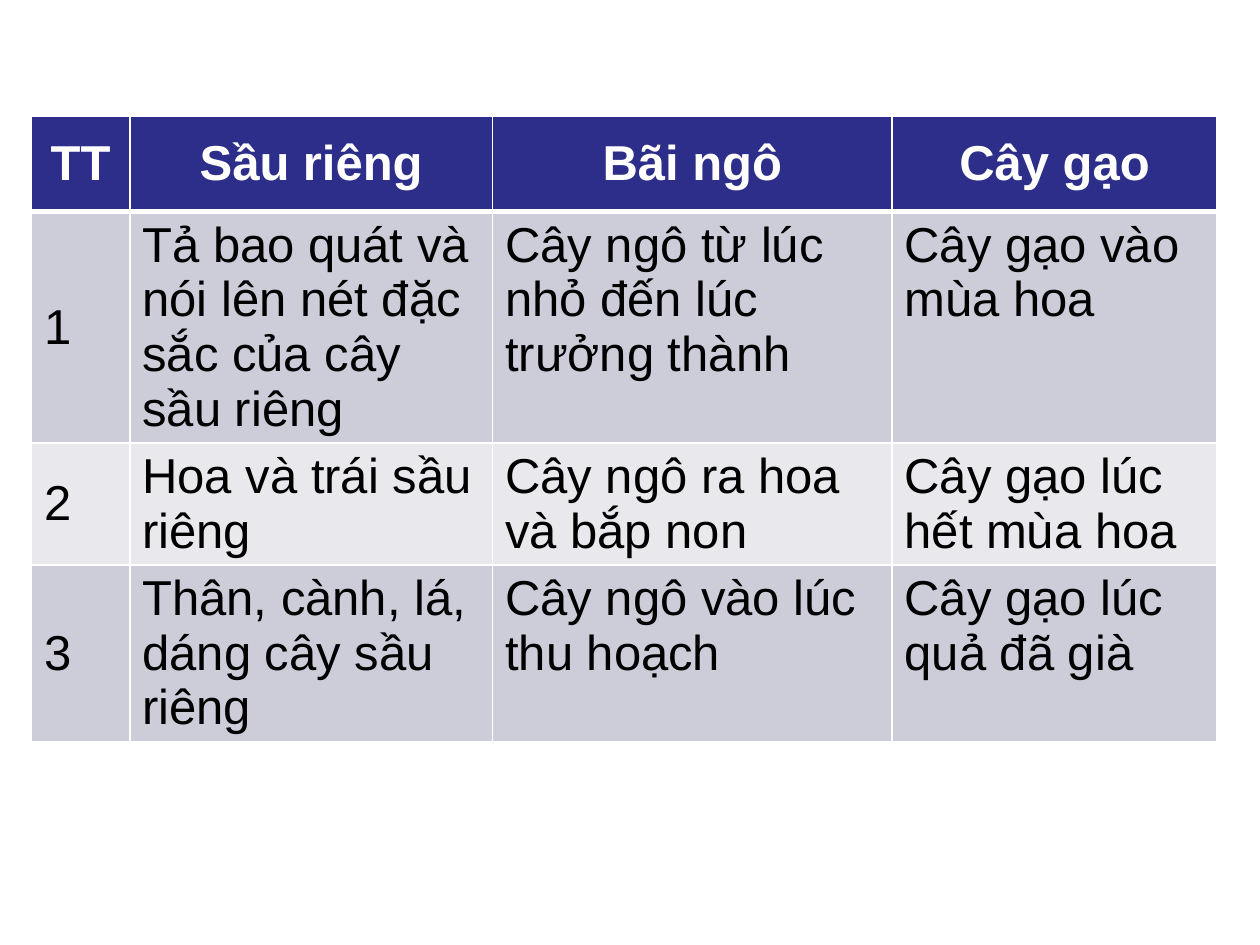
from lxml.etree import SubElement
from pptx import Presentation
from pptx.dml.color import RGBColor
from pptx.enum.text import MSO_ANCHOR, PP_ALIGN
from pptx.oxml.ns import qn
from pptx.util import Inches, Pt

SLIDE_WIDTH, SLIDE_HEIGHT = Inches(10), Inches(7.5)
COLORS = {
    "header": "2D2D8A",
    "odd": "CDCDDA",
    "even": "E8E8ED",
    "border": "FFFFFF",
    "header_text": "FFFFFF",
    "body_text": "000000",
}
# Column widths as shares of the slide width, row heights in inches
COLUMN_SHARES = [0.078, 0.288, 0.317, 0.258]
ROW_HEIGHTS = [0.76, 1.83, 0.97, 1.4]
COMPARISON = [
    ["TT", "Sầu riêng", "Bãi ngô", "Cây gạo"],
    ["1", "Tả bao quát và nói lên nét đặc sắc của cây sầu riêng",
     "Cây ngô từ lúc nhỏ đến lúc trưởng thành", "Cây gạo vào mùa hoa"],
    ["2", "Hoa và trái sầu riêng", "Cây ngô ra hoa và bắp non",
     "Cây gạo lúc hết mùa hoa"],
    ["3", "Thân, cành, lá, dáng cây sầu riêng",
     "Cây ngô vào lúc thu hoạch", "Cây gạo lúc quả đã già"],
]


def color(name):
    return RGBColor.from_string(COLORS[name])


def set_borders(cell, widths):
    """Draw the cell's sides; border lines must precede the fill in tcPr."""
    properties = cell._tc.get_or_add_tcPr()
    for side, width in widths.items():
        line = SubElement(properties, qn(f"a:ln{side}"), w=str(Pt(width)))
        solid = SubElement(line, qn("a:solidFill"))
        SubElement(solid, qn("a:srgbClr"), val=COLORS["border"])


def write_cell(cell, text, row, column):
    is_header = row == 0
    # The rule under the header is thicker, seen from both rows
    set_borders(cell, {"L": 1, "R": 1, "T": 3 if row == 1 else 1,
                       "B": 3 if is_header else 1})
    cell.fill.solid()
    band = "header" if is_header else "odd" if row % 2 else "even"
    cell.fill.fore_color.rgb = color(band)
    centred = is_header or column == 0
    cell.vertical_anchor = MSO_ANCHOR.MIDDLE if centred else MSO_ANCHOR.TOP

    paragraph = cell.text_frame.paragraphs[0]
    paragraph.alignment = PP_ALIGN.CENTER if is_header else PP_ALIGN.LEFT
    run = paragraph.add_run()
    run.text = text
    run.font.name = "Arial"
    run.font.size = Pt(28)
    run.font.bold = is_header
    run.font.color.rgb = color("header_text" if is_header else "body_text")


def add_comparison(slide):
    widths = [int(SLIDE_WIDTH * share) for share in COLUMN_SHARES]
    heights = [Inches(height) for height in ROW_HEIGHTS]
    table = slide.shapes.add_table(
        len(heights), len(widths), Inches(0.25), Inches(0.92),
        sum(widths), sum(heights)).table
    for column, width in zip(table.columns, widths):
        column.width = width
    for row, height in zip(table.rows, heights):
        row.height = height
    for row, texts in enumerate(COMPARISON):
        for column, text in enumerate(texts):
            write_cell(table.cell(row, column), text, row, column)


def main():
    presentation = Presentation()
    presentation.slide_width = SLIDE_WIDTH
    presentation.slide_height = SLIDE_HEIGHT
    # Blank layout
    slide = presentation.slides.add_slide(presentation.slide_layouts[6])
    add_comparison(slide)
    presentation.save("out.pptx")


if __name__ == "__main__":
    main()
